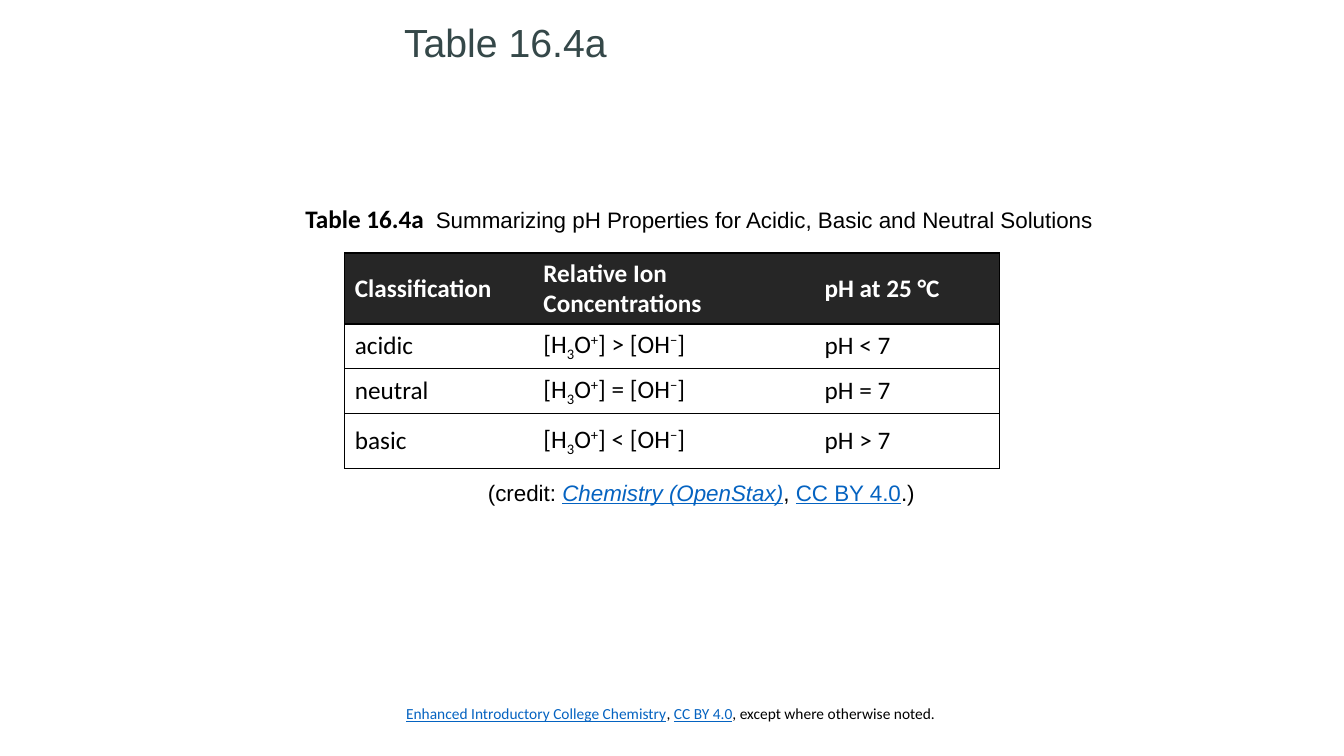
from lxml.etree import SubElement
from pptx import Presentation
from pptx.dml.color import RGBColor
from pptx.enum.text import MSO_ANCHOR as Anchor
from pptx.oxml.ns import qn
from pptx.util import Inches, Pt

COLUMNS, ROWS = 133.3, 75
SLIDE_WIDTH, SLIDE_HEIGHT = Inches(13.33), Inches(7.5)
COLORS = {"title": "354849", "text": "000000", "link": "0563C1",
          "header": "262626", "body": "FFFFFF", "border": "000000"}
BASELINES = {"sub": "-25000", "super": "30000"}
NO_STYLE = "{2D5ABB26-0587-4C30-8999-92F81FD0307C}"
HEADINGS = ["Classification", "Relative Ion Concentrations", "pH at 25 °C"]
CLASSES = [("acidic", ">", "<"), ("neutral", "=", "="), ("basic", "<", ">")]
COLUMN_WIDTHS = [18.7, 27.9, 18.3]
ROW_HEIGHTS = [7.05, 4.4, 4.5, 5.4]


def across(columns):
    return round(SLIDE_WIDTH * columns / COLUMNS)


def down(rows):
    return round(SLIDE_HEIGHT * rows / ROWS)


def color(name):
    return RGBColor.from_string(COLORS[name])


def style(font, size, name, tint="text", bold=False):
    font.size, font.name, font.bold = Pt(size), name, bold
    font.color.rgb = color(tint)


def add_run(paragraph, text, link=False, italic=False):
    run = paragraph.add_run()
    run.text = text
    if link:
        run.font.color.rgb = color("link")
        run.font.underline = True
    if italic:
        run.font.italic = True
    return run


def add_text(slide, box, wrap=True):
    left, top, width, height = box
    shape = slide.shapes.add_textbox(across(left), down(top), across(width), down(height))
    shape.text_frame.word_wrap = wrap
    return shape.text_frame


def add_title(slide, box):
    frame = add_text(slide, box)
    frame.vertical_anchor = Anchor.BOTTOM
    paragraph = frame.paragraphs[0]
    paragraph.line_spacing = 0.9
    style(paragraph.font, 28, "Arial", "title")
    add_run(paragraph, "Table 16.4a")


def add_caption(slide, box):
    paragraph = add_text(slide, box).paragraphs[0]
    label = add_run(paragraph, "Table 16.4a ")
    style(label.font, 18, "Calibri", bold=True)
    summary = add_run(paragraph, " Summarizing pH Properties for Acidic, Basic and Neutral Solutions")
    style(summary.font, 16, "Arial")


def add_credit(slide, box):
    paragraph = add_text(slide, box, wrap=False).paragraphs[0]
    style(paragraph.font, 16, "Arial")
    add_run(paragraph, "(credit: ")
    add_run(paragraph, "Chemistry (OpenStax)", link=True, italic=True)
    add_run(paragraph, ", ")
    add_run(paragraph, "CC BY 4.0", link=True)
    add_run(paragraph, ".)")


def add_footer(slide, box):
    paragraph = add_text(slide, box).paragraphs[0]
    style(paragraph.font, 11, "Calibri")
    add_run(paragraph, "Enhanced Introductory College Chemistry", link=True)
    add_run(paragraph, ", ")
    add_run(paragraph, "CC BY 4.0", link=True)
    add_run(paragraph, ", except where otherwise noted.")


def add_borders(cell, sides):
    properties = cell._tc.get_or_add_tcPr()
    for position, side in enumerate(sides):
        line = SubElement(properties, qn(f"a:ln{side}"), w=str(Pt(1)))
        fill = SubElement(line, qn("a:solidFill"))
        SubElement(fill, qn("a:srgbClr"), val=COLORS["border"])
        properties.insert(position, line)


def ion_parts(sign):
    return [("[H", None), ("3", "sub"), ("O", None), ("+", "super"),
            (f"] {sign} [OH", None), ("−", "super"), ("]", None)]


def fill_cell(cell, parts, sides, header):
    cell.vertical_anchor = Anchor.MIDDLE
    cell.fill.solid()
    cell.fill.fore_color.rgb = color("header" if header else "body")
    add_borders(cell, sides)
    paragraph = cell.text_frame.paragraphs[0]
    style(paragraph.font, 18, "Calibri", "body" if header else "text", header)
    for text, baseline in parts:
        run = add_run(paragraph, text)
        if baseline:
            run._r.get_or_add_rPr().set("baseline", BASELINES[baseline])


def add_ph_table(slide, box):
    left, top, width, height = box
    rows = [[[(heading, None)] for heading in HEADINGS]]
    rows += [[[(name, None)], ion_parts(ion_sign), [(f"pH {ph_sign} 7", None)]]
             for name, ion_sign, ph_sign in CLASSES]
    table = slide.shapes.add_table(len(rows), len(HEADINGS), across(left), down(top),
                                   across(width), down(height)).table
    table.first_row = table.horz_banding = False
    table._tbl.tblPr.find(qn("a:tableStyleId")).text = NO_STYLE
    for column, share in zip(table.columns, COLUMN_WIDTHS):
        column.width = across(width * share / sum(COLUMN_WIDTHS))
    for row, share in zip(table.rows, ROW_HEIGHTS):
        row.height = down(height * share / sum(ROW_HEIGHTS))
    column_sides = ["LTB", "TB", "RTB"]
    for row_index, row in enumerate(rows):
        for column_index, parts in enumerate(row):
            fill_cell(table.cell(row_index, column_index), parts,
                      column_sides[column_index], row_index == 0)


def main():
    presentation = Presentation()
    presentation.slide_width, presentation.slide_height = SLIDE_WIDTH, SLIDE_HEIGHT
    slide = presentation.slides.add_slide(presentation.slide_layouts[6])
    add_footer(slide, (39.3, 69.4, 70.7, 4))
    add_title(slide, (39.1, 0, 22.7, 7))
    add_caption(slide, (29.3, 19.7, 81.1, 4))
    add_ph_table(slide, (34.2, 25.1, sum(COLUMN_WIDTHS), sum(ROW_HEIGHTS)))
    add_credit(slide, (47.4, 47, 44.9, 3.7))
    presentation.save("out.pptx")


if __name__ == "__main__":
    main()
